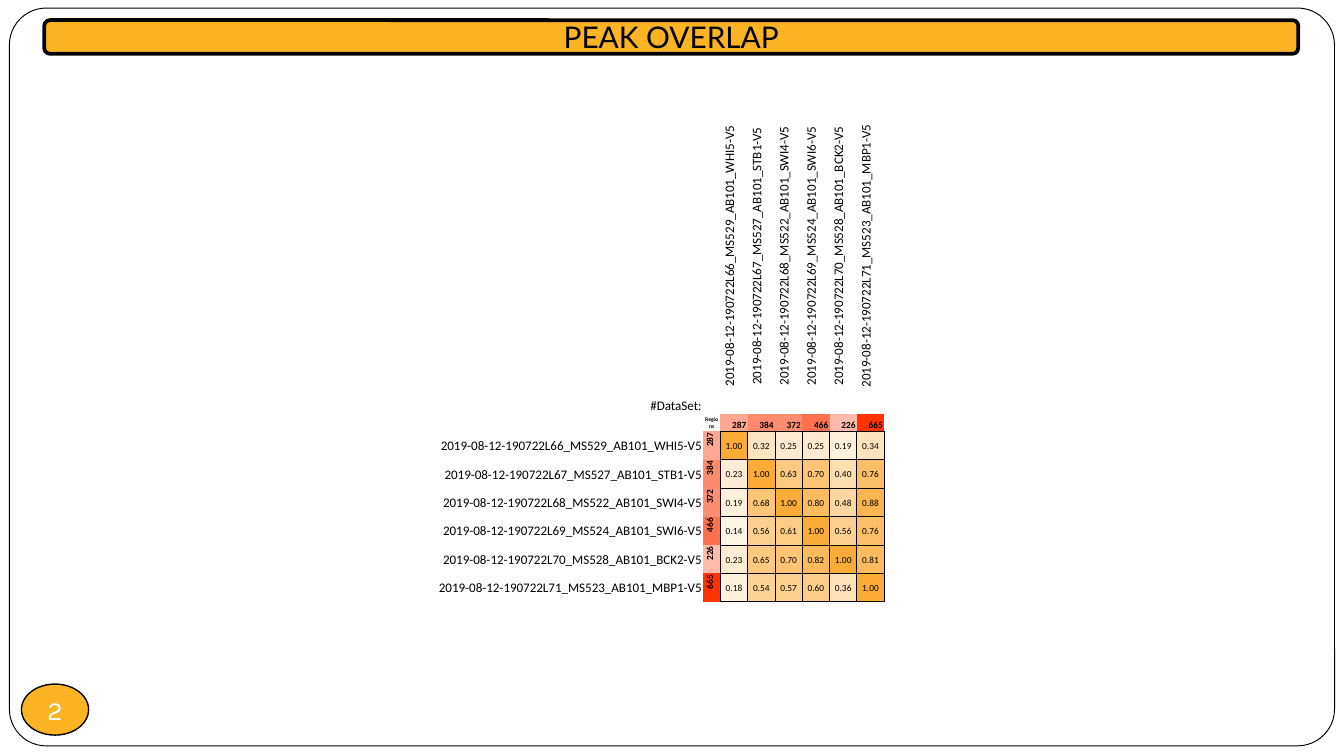
from dataclasses import dataclass
from lxml import etree
from pptx import Presentation
from pptx.dml.color import RGBColor
from pptx.enum.shapes import MSO_SHAPE as Preset
from pptx.enum.text import MSO_ANCHOR as Anchor, PP_ALIGN as Align
from pptx.oxml.ns import qn
from pptx.util import Inches, Pt


@dataclass(frozen=True)
class Theme:
    """Colours, fonts and type sizes of the slide."""
    black: str = "000000"
    white: str = "FFFFFF"
    accent: str = "FCB424"
    overlap_low: str = "FFF4E5"
    overlap_high: str = "FAAB38"
    regions_low: str = "FFBAA9"
    regions_high: str = "FF3300"
    title_font: str = "Lato"
    number_font: str = "Karla"
    table_font: str = "Calibri"
    title_size: int = 16
    number_size: int = 14
    label_size: int = 7
    value_size: int = 5
    caption_size: int = 3
    border: float = 0.5


THEME = Theme()
DATASETS = [
    ("2019-08-12-190722L66_MS529_AB101_WHI5-V5", 287, [1.00, 0.32, 0.25, 0.25, 0.19, 0.34]),
    ("2019-08-12-190722L67_MS527_AB101_STB1-V5", 384, [0.23, 1.00, 0.63, 0.70, 0.40, 0.76]),
    ("2019-08-12-190722L68_MS522_AB101_SWI4-V5", 372, [0.19, 0.68, 1.00, 0.80, 0.48, 0.88]),
    ("2019-08-12-190722L69_MS524_AB101_SWI6-V5", 466, [0.14, 0.56, 0.61, 1.00, 0.56, 0.76]),
    ("2019-08-12-190722L70_MS528_AB101_BCK2-V5", 226, [0.23, 0.65, 0.70, 0.82, 1.00, 0.81]),
    ("2019-08-12-190722L71_MS523_AB101_MBP1-V5", 665, [0.18, 0.54, 0.57, 0.60, 0.36, 1.00]),
]


def set_all(target, values):
    """Set every attribute named in a dict of format values."""
    for name, value in values.items():
        setattr(target, name, value)


def blend(low, high, share):
    """Return the colour lying at a share of the way from low to high."""
    pairs = zip(RGBColor.from_string(low), RGBColor.from_string(high))
    return str(RGBColor(*(round(a + (b - a) * share) for a, b in pairs)))


def overlap_color(value):
    """Return the heat colour of an overlap share."""
    return blend(THEME.overlap_low, THEME.overlap_high, (value - 0.14) / 0.86)


def regions_color(count):
    """Return the heat colour of a region count."""
    counts = [regions for _, regions, _ in DATASETS]
    share = (count - min(counts)) / (max(counts) - min(counts))
    return blend(THEME.regions_low, THEME.regions_high, share)


def write_text(frame, text, align, color, **font):
    """Write one formatted paragraph into a text frame."""
    paragraph = frame.paragraphs[0]
    paragraph.alignment = align
    run = paragraph.add_run()
    run.text = text
    set_all(run.font, font)
    run.font.color.rgb = RGBColor.from_string(color)


def add_box(slide, preset, bounds, fill, weight):
    """Add a filled preset shape with a black outline."""
    shape = slide.shapes.add_shape(preset, *map(Inches, bounds))
    shape.shadow.inherit = False
    shape.fill.solid()
    shape.fill.fore_color.rgb = RGBColor.from_string(fill)
    shape.line.color.rgb = RGBColor.from_string(THEME.black)
    shape.line.width = Pt(weight)
    shape.text_frame.vertical_anchor = Anchor.MIDDLE
    return shape


def set_borders(cell, sides):
    """Draw the named cell borders and clear the others."""
    properties = cell._tc.get_or_add_tcPr()
    for side in "LRTB":
        line = etree.SubElement(properties, qn(f"a:ln{side}"), w=str(Pt(THEME.border)))
        if side in sides:
            fill = etree.SubElement(line, qn("a:solidFill"))
            etree.SubElement(fill, qn("a:srgbClr"), val=THEME.black)
        else:
            etree.SubElement(line, qn("a:noFill"))


def fill_cell(cell, text="", size=THEME.value_size, align=Align.CENTER,
              anchor=Anchor.MIDDLE, bold=False, fill=None, sides="", upright=False):
    """Write and format one table cell."""
    margin = Inches(0.01)
    set_all(cell, {"margin_left": margin, "margin_right": margin, "margin_top": margin,
                   "margin_bottom": 0, "vertical_anchor": anchor})
    set_borders(cell, sides)
    if fill:
        cell.fill.solid()
        cell.fill.fore_color.rgb = RGBColor.from_string(fill)
    else:
        cell.fill.background()
    if upright:
        cell._tc.get_or_add_tcPr().set("vert", "vert270")
    if text:
        write_text(cell.text_frame, text, align, THEME.black,
                   name=THEME.table_font, size=Pt(size), bold=bold)
    else:
        ending = cell.text_frame.paragraphs[0]._p.get_or_add_endParaRPr()
        ending.set("sz", str(100 * size))


def add_overlap_table(slide):
    """Add the heat map of peak overlap between the data sets."""
    count = len(DATASETS)
    width, height = 3.66, 3.75
    label_width, strip, label_height = 2.31, 0.13, 2.35
    frame = slide.shapes.add_table(count + 2, count + 2, *map(Inches, (2.92, 0.73, width, height)))
    table = frame.table
    set_all(table, {"first_row": False, "horz_banding": False})
    value_width = (width - label_width - strip) / count
    value_height = (height - label_height - strip) / count
    for column, size in zip(table.columns, [label_width, strip] + [value_width] * count):
        column.width = Inches(size)
    for row, size in zip(table.rows, [label_height, strip] + [value_height] * count):
        row.height = Inches(size)

    label = {"size": THEME.label_size}
    regions_format = {"align": Align.RIGHT, "anchor": Anchor.BOTTOM, "bold": True}
    fill_cell(table.cell(0, 0), "#DataSet:", align=Align.RIGHT, anchor=Anchor.BOTTOM, **label)
    fill_cell(table.cell(0, 1))
    fill_cell(table.cell(1, 0))
    fill_cell(table.cell(1, 1), "Regions", THEME.caption_size, bold=True)
    for index, (name, regions, overlaps) in enumerate(DATASETS, start=2):
        heat = regions_color(regions)
        fill_cell(table.cell(0, index), name, anchor=Anchor.BOTTOM, upright=True, **label)
        fill_cell(table.cell(1, index), str(regions), fill=heat, sides="B", **regions_format)
        fill_cell(table.cell(index, 0), name, align=Align.RIGHT, **label)
        fill_cell(table.cell(index, 1), str(regions), fill=heat, sides="R",
                  upright=True, **regions_format)
        for column, value in enumerate(overlaps, start=2):
            fill_cell(table.cell(index, column), f"{value:.2f}",
                      fill=overlap_color(value), sides="LRTB")


def add_page_number(slide):
    """Add the page number in its oval badge."""
    badge = add_box(slide, Preset.OVAL, (0.16, 5.09, 0.5, 0.38), THEME.accent, 0.75)
    set_all(badge.text_frame, {"margin_left": 0, "margin_right": 0, "margin_top": 0,
                               "margin_bottom": 0, "word_wrap": False})
    write_text(badge.text_frame, "2", Align.CENTER, THEME.white,
               name=THEME.number_font, size=Pt(THEME.number_size))


def add_title(slide):
    """Add the title banner."""
    banner = add_box(slide, Preset.ROUNDED_RECTANGLE, (0.33, 0.15, 9.33, 0.25), THEME.accent, 2)
    write_text(banner.text_frame, "PEAK OVERLAP", Align.CENTER, THEME.black,
               name=THEME.title_font, size=Pt(THEME.title_size))


def main():
    """Build and save the slide."""
    presentation = Presentation()
    set_all(presentation, {"slide_width": Inches(10), "slide_height": Inches(10) * 9 // 16})
    slide = presentation.slides.add_slide(presentation.slide_layouts[6])
    border = add_box(slide, Preset.ROUNDED_RECTANGLE, (0.07, 0.06, 9.86, 5.49),
                     THEME.white, THEME.border)
    border.adjustments[0] = 0.05
    add_page_number(slide)
    add_title(slide)
    add_overlap_table(slide)
    presentation.save("out.pptx")


if __name__ == "__main__":
    main()
